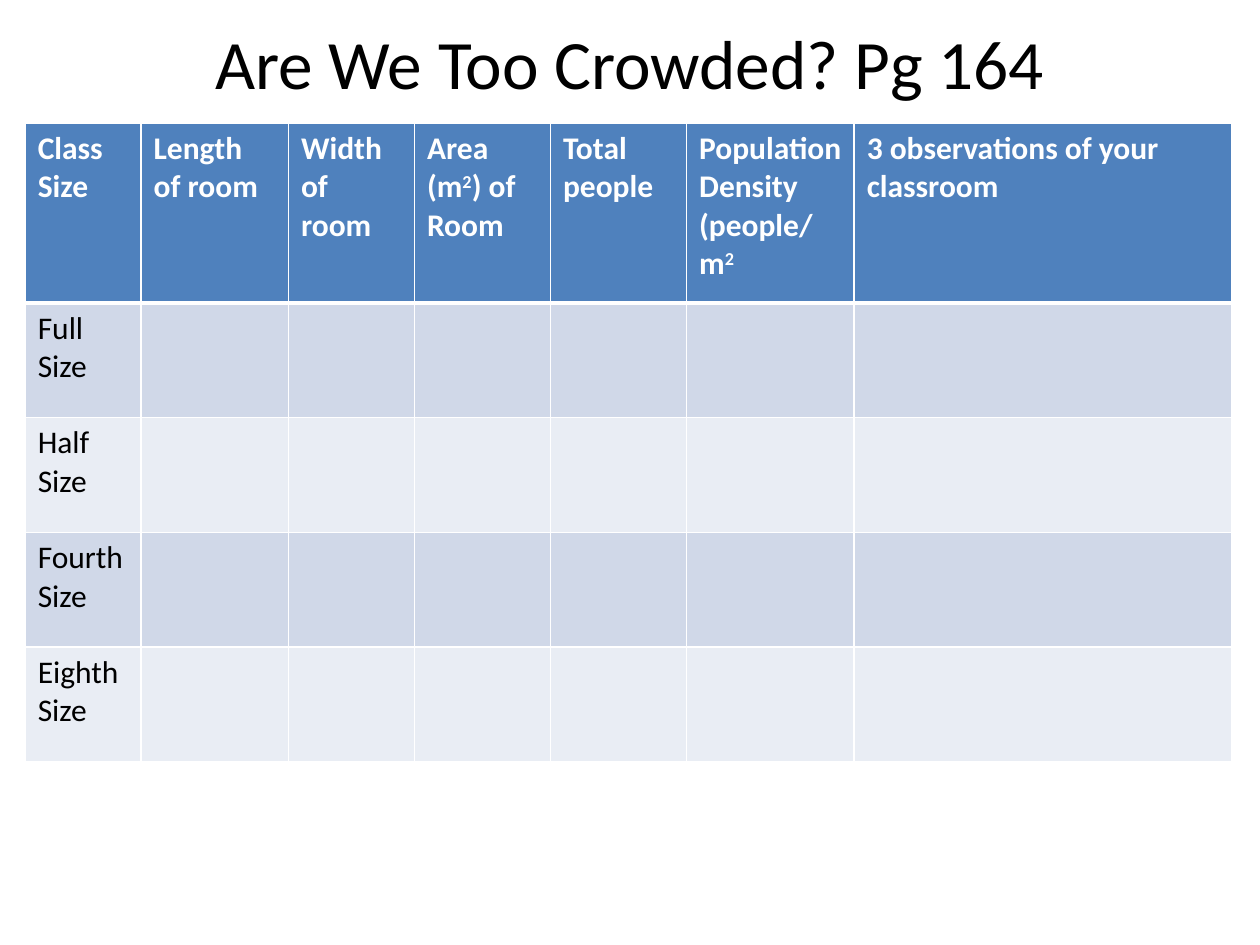
from lxml.etree import SubElement
from pptx import Presentation
from pptx.dml.color import RGBColor as RGB
from pptx.enum.text import MSO_ANCHOR as Anchor, PP_ALIGN as Align
from pptx.oxml.ns import qn
from pptx.util import Inches, Pt

COLORS = {"text": "000000", "head": "4F81BD", "odd": "D0D8E8",
          "even": "E9EDF4", "white": "FFFFFF"}
HEADINGS = ["Class\nSize", "Length of room", "Width of room", "Area (m²) of Room",
            "Total people", "Population Density\n(people/m²",
            "3 observations of your classroom"]
CLASS_SIZES = ["Full", "Half", "Fourth", "Eighth"]
COL_WIDTHS = [0.92, 1.17, 1, 1.08, 1.08, 1.33, 3]
HEAD_HEIGHT, ROW_HEIGHT = 1.43, 0.91


class SlideBuilder:
    font = "Calibri"

    def __init__(self, prs):
        self.width, self.height = prs.slide_width, prs.slide_height
        self.slide = prs.slides.add_slide(prs.slide_layouts[6])

    def box(self, x, y, w, h):
        """Turn shares of the slide's size into lengths."""
        return (int(x * self.width), int(y * self.height),
                int(w * self.width), int(h * self.height))

    def set_text(self, tf, text, size, color, bold=False, align=Align.LEFT):
        """Fill a text frame, one paragraph a line, with ² as a raised 2."""
        tf.text = text
        for p in tf.paragraphs:
            p.alignment = align
            before, mark, after = p.text.partition("²")
            p.text = before
            if mark:
                r = p.add_run()
                r.text = "2"
                r.font._element.set("baseline", "30000")
            if after:
                p.add_run().text = after
            for r in p.runs:
                r.font.name, r.font.size, r.font.bold = self.font, Pt(size), bold
                r.font.color.rgb = RGB.from_string(COLORS[color])

    def title(self, text, *shares):
        tf = self.slide.shapes.add_textbox(*self.box(*shares)).text_frame
        tf.word_wrap = True
        tf.vertical_anchor = Anchor.MIDDLE
        self.set_text(tf, text, 39.6, "text", align=Align.CENTER)

    def borders(self, cell, top, bottom):
        tc_pr = cell._tc.get_or_add_tcPr()
        for side, width in (("L", 1), ("R", 1), ("T", top), ("B", bottom)):
            ln = SubElement(tc_pr, qn("a:ln" + side), w=str(int(Pt(width))))
            fill = SubElement(ln, qn("a:solidFill"))
            SubElement(fill, qn("a:srgbClr"), val=COLORS["white"])

    def table(self, rows, widths, heights, *shares):
        table = self.slide.shapes.add_table(
            len(rows), len(widths), *self.box(*shares)).table
        for column, width in zip(table.columns, widths):
            column.width = Inches(width)
        for i, (row, height, texts) in enumerate(zip(table.rows, heights, rows)):
            row.height = Inches(height)
            head = i == 0
            color = "head" if head else "odd" if i % 2 else "even"
            for cell, text in zip(row.cells, texts):
                self.borders(cell, 3 if i == 1 else 1, 3 if head else 1)
                cell.fill.solid()
                cell.fill.fore_color.rgb = RGB.from_string(COLORS[color])
                if text:
                    self.set_text(cell.text_frame, text, 18,
                                  "white" if head else "text", bold=head)


def main():
    prs = Presentation()
    prs.slide_width, prs.slide_height = Inches(10), Inches(7.5)
    builder = SlideBuilder(prs)
    builder.title("Are We Too Crowded? Pg 164", 0.05, 0.01, 0.9, 0.11)
    blanks = [""] * (len(HEADINGS) - 1)
    rows = [HEADINGS] + [[f"{size}\nSize"] + blanks for size in CLASS_SIZES]
    heights = [HEAD_HEIGHT] + [ROW_HEIGHT] * len(CLASS_SIZES)
    builder.table(rows, COL_WIDTHS, heights, 0.02, 0.13, 0.96, 0.67)
    prs.save("out.pptx")


if __name__ == "__main__":
    main()
